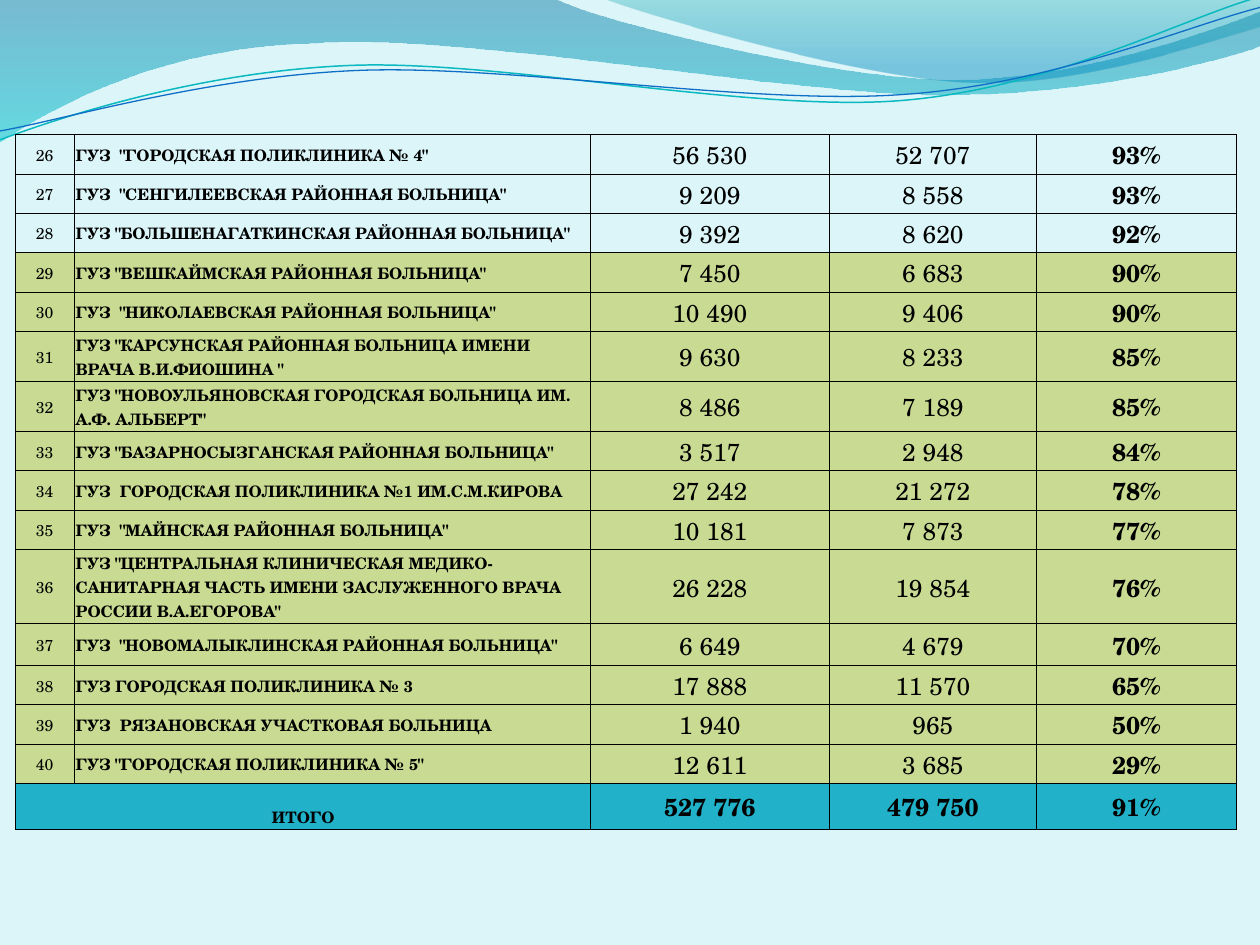
from math import cos, radians, sin

from lxml.etree import SubElement
from pptx import Presentation
from pptx.dml.color import RGBColor
from pptx.enum.text import MSO_ANCHOR, PP_ALIGN
from pptx.oxml.ns import qn
from pptx.util import Inches, Pt

COLORS = {
    "background": "DBF5F9",
    "text": "000000",
    "behind": "C9DA92",
    "total": "21B2C9",
    "deep_blue": "0074A1",
    "turquoise": "00C6CF",
    "teal": "00A1A9",
    "sky": "008BBF",
    "teal_line": "0AB8BF",
    "blue_line": "0F6FC6",
}
FONT = "TeX Gyre Schola"
CURVE_TILT = -2.7

WIDE_WAVE = [
    [(0, 0)],
    [(4.4, -0.01)],
    [(4.76, 0.17), (6.64, 0.63), (7.58, 0.63)],
    [(8.53, 0.63), (9.58, 0.26), (10, 0.09)],
    [(10.01, 0.36)],
    [(9.83, 0.44), (8.7, 0.76), (7.46, 0.75)],
    [(6.22, 0.75), (3.82, 0.28), (2.57, 0.34)],
    [(1.29, 0.36), (0.46, 0.83), (-0.01, 1.13)],
]
RIGHT_WAVE = [
    [(4.79, -0.01)],
    [(5.09, 0.11), (6.82, 0.62), (7.69, 0.65)],
    [(8.56, 0.69), (9.61, 0.32), (10, 0.21)],
    [(10, 0)],
]
TEAL_CURVE = [
    [(0, 1.11)],
    [(0.48, 0.93), (1.58, 0.57), (2.77, 0.52)],
    [(3.95, 0.47), (5.93, 0.89), (7.13, 0.8)],
    [(8.33, 0.71), (9.38, 0.15), (9.98, -0.02)],
]
BLUE_CURVE = [
    [(0, 1.04)],
    [(0.47, 0.96), (1.64, 0.61), (2.83, 0.56)],
    [(4.03, 0.51), (5.97, 0.84), (7.17, 0.75)],
    [(8.36, 0.67), (9.41, 0.21), (10, 0.06)],
]

COLUMN_WIDTHS = [0.47, 4.1, 1.89, 1.65, 1.58]
ROW_HEIGHTS = [0.27, 0.28, 0.31, 0.24, 0.31, 0.37, 0.34, 0.31,
               0.31, 0.31, 0.39, 0.33, 0.31, 0.24, 0.31, 0.37]
FIRST_NUMBER = 26
FIRST_BEHIND = 29
HOSPITALS = [
    ('ГУЗ  "ГОРОДСКАЯ ПОЛИКЛИНИКА № 4"', "56 530", "52 707", "93%"),
    ('ГУЗ  "СЕНГИЛЕЕВСКАЯ РАЙОННАЯ БОЛЬНИЦА"', "9 209", "8 558", "93%"),
    ('ГУЗ "БОЛЬШЕНАГАТКИНСКАЯ РАЙОННАЯ БОЛЬНИЦА"', "9 392", "8 620", "92%"),
    ('ГУЗ "ВЕШКАЙМСКАЯ РАЙОННАЯ БОЛЬНИЦА"', "7 450", "6 683", "90%"),
    ('ГУЗ  "НИКОЛАЕВСКАЯ РАЙОННАЯ БОЛЬНИЦА"', "10 490", "9 406", "90%"),
    ('ГУЗ "КАРСУНСКАЯ РАЙОННАЯ БОЛЬНИЦА ИМЕНИ ВРАЧА В.И.ФИОШИНА "',
     "9 630", "8 233", "85%"),
    ('ГУЗ "НОВОУЛЬЯНОВСКАЯ ГОРОДСКАЯ БОЛЬНИЦА ИМ. А.Ф. АЛЬБЕРТ"',
     "8 486", "7 189", "85%"),
    ('ГУЗ "БАЗАРНОСЫЗГАНСКАЯ РАЙОННАЯ БОЛЬНИЦА"', "3 517", "2 948", "84%"),
    ("ГУЗ  ГОРОДСКАЯ ПОЛИКЛИНИКА №1 ИМ.С.М.КИРОВА", "27 242", "21 272", "78%"),
    ('ГУЗ  "МАЙНСКАЯ РАЙОННАЯ БОЛЬНИЦА"', "10 181", "7 873", "77%"),
    ('ГУЗ "ЦЕНТРАЛЬНАЯ КЛИНИЧЕСКАЯ МЕДИКО-САНИТАРНАЯ ЧАСТЬ ИМЕНИ '
     'ЗАСЛУЖЕННОГО ВРАЧА РОССИИ В.А.ЕГОРОВА"', "26 228", "19 854", "76%"),
    ('ГУЗ  "НОВОМАЛЫКЛИНСКАЯ РАЙОННАЯ БОЛЬНИЦА"', "6 649", "4 679", "70%"),
    ("ГУЗ ГОРОДСКАЯ ПОЛИКЛИНИКА № 3", "17 888", "11 570", "65%"),
    ("ГУЗ  РЯЗАНОВСКАЯ УЧАСТКОВАЯ БОЛЬНИЦА", "1 940", "965", "50%"),
    ('ГУЗ "ГОРОДСКАЯ ПОЛИКЛИНИКА № 5"', "12 611", "3 685", "29%"),
]
TOTAL = ("ИТОГО", "527 776", "479 750", "91%")


def color(name):
    return RGBColor.from_string(COLORS[name])


def turn(segments, degrees):
    (start_x, start_y), (end_x, end_y) = segments[0][0], segments[-1][-1]
    center_x, center_y = (start_x + end_x) / 2, (start_y + end_y) / 2
    cosine, sine = cos(radians(degrees)), sin(radians(degrees))
    return [[(center_x + (x - center_x) * cosine - (y - center_y) * sine,
              center_y + (x - center_x) * sine + (y - center_y) * cosine)
             for x, y in segment] for segment in segments]


class SlideBuilder:
    def __init__(self, slide):
        self.slide = slide
        fill = slide.background.fill
        fill.solid()
        fill.fore_color.rgb = color("background")

    def outline(self, segments, close):
        segments = [[(Inches(x), Inches(y)) for x, y in segment] for segment in segments]
        ends = [segment[-1] for segment in segments]
        builder = self.slide.shapes.build_freeform(*ends[0], scale=1.0)
        builder.add_line_segments(ends[1:], close=close)
        shape = builder.convert_to_shape()
        shape.shadow.inherit = False
        lines = list(shape._element.iter(qn("a:lnTo")))
        for line, segment in zip(lines, segments[1:]):
            if len(segment) == 3:
                line.tag = qn("a:cubicBezTo")
                line.remove(line[0])
                for x, y in segment:
                    SubElement(line, qn("a:pt"), x=str(x - shape.left), y=str(y - shape.top))
        return shape

    def wave(self, segments, stops):
        shape = self.outline(segments, True)
        shape.line.fill.background()
        shape.fill.gradient()
        shape.fill.gradient_angle = 270
        for stop, (position, name, _) in zip(shape.fill.gradient_stops, stops):
            stop.position = position
            stop.color.rgb = color(name)
        gradient_colors = shape._element.spPr.iter(qn("a:srgbClr"))
        for element, (_, _, opacity) in zip(list(gradient_colors), stops):
            SubElement(element, qn("a:alpha"), val=str(opacity * 1000))

    def curve(self, segments, name, width):
        shape = self.outline(turn(segments, -CURVE_TILT), False)
        shape.rotation = CURVE_TILT
        shape.fill.background()
        shape.line.color.rgb = color(name)
        shape.line.width = Pt(width)

    def table(self, left, top, row_heights, column_widths):
        frame = self.slide.shapes.add_table(
            len(row_heights), len(column_widths), Inches(left), Inches(top),
            Inches(sum(column_widths)), Inches(sum(row_heights)))
        table = frame.table
        table.first_row = table.horz_banding = False
        for row, height in zip(table.rows, row_heights):
            row.height = Inches(height)
        for column, width in zip(table.columns, column_widths):
            column.width = Inches(width)
        return table

    def cell(self, cell, text, fill=None, size=14, bold=False,
             align=PP_ALIGN.CENTER, anchor=MSO_ANCHOR.MIDDLE):
        layout = {
            "margin_left": Inches(0.01), "margin_right": Inches(0.01),
            "margin_top": Inches(0.01), "margin_bottom": 0,
            "vertical_anchor": anchor,
        }
        for attribute, value in layout.items():
            setattr(cell, attribute, value)
        properties = cell._tc.get_or_add_tcPr()
        for side in ("a:lnL", "a:lnR", "a:lnT", "a:lnB"):
            border = SubElement(properties, qn(side), w=str(Pt(0.5)))
            border_fill = SubElement(border, qn("a:solidFill"))
            SubElement(border_fill, qn("a:srgbClr"), val=COLORS["text"])
        if fill:
            cell.fill.solid()
            cell.fill.fore_color.rgb = color(fill)
        else:
            cell.fill.background()
        paragraph = cell.text_frame.paragraphs[0]
        paragraph.alignment = align
        run = paragraph.add_run()
        run.text = text
        for attribute, value in {"name": FONT, "size": Pt(size), "bold": bold}.items():
            setattr(run.font, attribute, value)
        run.font.color.rgb = color("text")


def main():
    presentation = Presentation()
    presentation.slide_width, presentation.slide_height = Inches(10), Inches(7.5)
    builder = SlideBuilder(presentation.slides.add_slide(presentation.slide_layouts[6]))

    builder.wave(WIDE_WAVE, [(0, "deep_blue", 45), (1, "turquoise", 55)])
    builder.wave(RIGHT_WAVE, [(0, "teal", 30), (0.8, "sky", 45)])
    builder.curve(TEAL_CURVE, "teal_line", 0.85)
    builder.curve(BLUE_CURVE, "blue_line", 0.75)

    table = builder.table(0.12, 1.07, ROW_HEIGHTS, COLUMN_WIDTHS)
    for index, (name, *values) in enumerate(HOSPITALS):
        number = FIRST_NUMBER + index
        label_fill, value_fill = (
            ("behind", "behind") if number >= FIRST_BEHIND else (None, "background"))
        cells = table.rows[index].cells
        builder.cell(cells[0], str(number), label_fill, size=9)
        builder.cell(cells[1], name, label_fill, size=9, bold=True, align=PP_ALIGN.LEFT)
        for column, value in enumerate(values, start=2):
            builder.cell(cells[column], value, value_fill, bold=column == 4)

    total_row = len(HOSPITALS)
    table.cell(total_row, 0).merge(table.cell(total_row, 1))
    builder.cell(table.cell(total_row, 0), TOTAL[0], "total", size=9, bold=True,
                 anchor=MSO_ANCHOR.BOTTOM)
    for column, text in enumerate(TOTAL[1:], start=2):
        builder.cell(table.cell(total_row, column), text, "total", bold=True)

    presentation.save("out.pptx")


if __name__ == "__main__":
    main()
